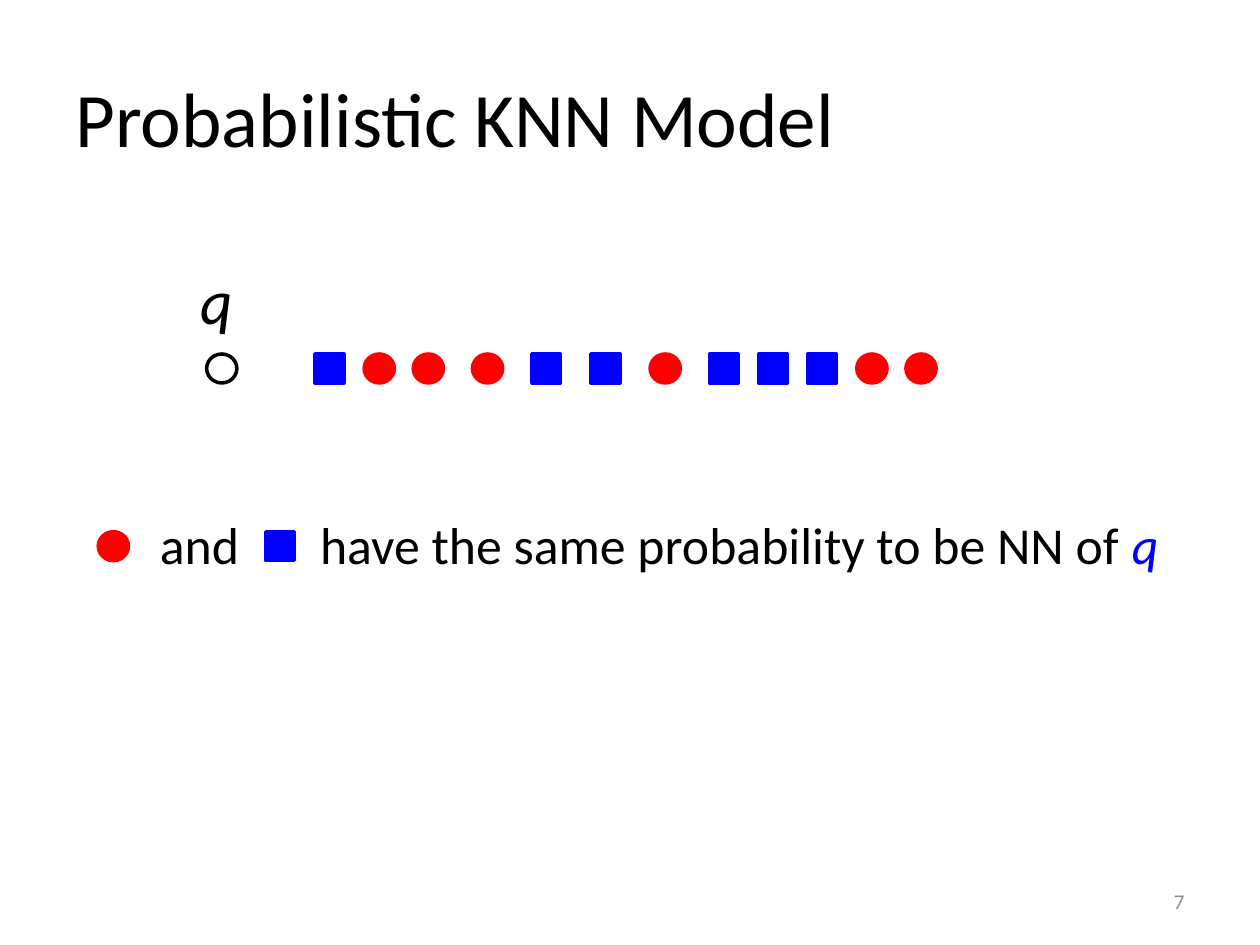
from lxml import etree
from pptx import Presentation
from pptx.dml.color import RGBColor
from pptx.enum import shapes, text
from pptx.oxml import ns
from pptx.util import Inches, Pt

BLACK = RGBColor(0x00, 0x00, 0x00)
WHITE = RGBColor(0xFF, 0xFF, 0xFF)
BLUE = RGBColor(0x00, 0x00, 0xFF)
RED = RGBColor(0xFF, 0x00, 0x00)
GRAY = RGBColor(0x8C, 0x8C, 0x8C)

FONT = "Calibri"
STATEMENT_SIZE = 29.6
MARK_HEIGHT = 0.23
# kind: (preset shape, width, fill, line)
MARKS = {
    "square": (shapes.MSO_SHAPE.RECTANGLE, 0.23, BLUE, BLUE),
    "circle": (shapes.MSO_SHAPE.OVAL, 0.24, RED, RED),
    "query": (shapes.MSO_SHAPE.OVAL, 0.24, WHITE, BLACK),
}
# Neighbours of q in order of distance: kind and left edge
NEIGHBOURS = [
    ("square", 2.5), ("circle", 2.89), ("circle", 3.28), ("circle", 3.75),
    ("square", 4.22), ("square", 4.69), ("circle", 5.16), ("square", 5.63),
    ("square", 6.02), ("square", 6.41), ("circle", 6.8), ("circle", 7.19),
]


def place(shape, left, top, width, height):
    shape.left, shape.top = Inches(left), Inches(top)
    shape.width, shape.height = Inches(width), Inches(height)


def add_text(paragraph, content, size, color=BLACK, italic=False, align=None):
    run = paragraph.add_run()
    run.text = content
    run.font.name = FONT
    run.font.size = Pt(size)
    run.font.italic = italic
    run.font.color.rgb = color
    if align is not None:
        paragraph.alignment = align


def add_mark(slide, kind, left, top):
    preset, width, fill, line = MARKS[kind]
    shape = slide.shapes.add_shape(
        preset, Inches(left), Inches(top), Inches(width), Inches(MARK_HEIGHT))
    shape.shadow.inherit = False
    shape.fill.solid()
    shape.fill.fore_color.rgb = fill
    shape.line.color.rgb = line
    shape.line.width = Pt(2)


def add_title(slide, left, top, width, height):
    title = slide.shapes.title
    place(title, left, top, width, height)
    title.text_frame.vertical_anchor = text.MSO_ANCHOR.MIDDLE
    add_text(title.text_frame.paragraphs[0], "Probabilistic KNN Model", 44,
             align=text.PP_ALIGN.LEFT)


def add_neighbour_row(slide, left, top):
    # Query point with its label above
    add_mark(slide, "query", left, top)
    label = slide.shapes.add_textbox(
        Inches(left - 0.15), Inches(top - 0.78), Inches(0.46), Inches(0.71))
    label.text_frame.word_wrap = False
    add_text(label.text_frame.paragraphs[0], "q", 36, italic=True)

    for kind, mark_left in NEIGHBOURS:
        add_mark(slide, kind, mark_left, top)


def add_statement(slide, left, top, width, height):
    # Word between the two marks
    joiner = slide.shapes.add_textbox(
        Inches(left + 0.56), Inches(top), Inches(0.9), Inches(height))
    joiner.text_frame.word_wrap = False

    # Sentence after the marks
    body = slide.placeholders[1]
    place(body, left, top, width, height)
    body.text_frame.auto_size = text.MSO_AUTO_SIZE.NONE
    body.text_frame.margin_left = Inches(1.93)

    joiner_line, body_line = (
        shape.text_frame.paragraphs[0] for shape in (joiner, body))
    for paragraph in (joiner_line, body_line):
        paragraph.space_before = Pt(6)
    properties = body_line._p.get_or_add_pPr()
    properties.set("marL", "0")
    properties.set("indent", "0")
    etree.SubElement(properties, ns.qn("a:buNone"))

    add_text(joiner_line, "and", STATEMENT_SIZE)
    add_text(body_line, "have the same probability to be NN of ",
             STATEMENT_SIZE)
    add_text(body_line, "q", STATEMENT_SIZE, color=BLUE, italic=True)

    # Marks that stand in for words
    add_mark(slide, "circle", left + 0.17, top + 0.2)
    add_mark(slide, "square", left + 1.5, top + 0.2)


def add_slide_number(slide, left, top, width, height):
    box = slide.shapes.add_textbox(
        Inches(left), Inches(top), Inches(width), Inches(height))
    box.text_frame.word_wrap = True
    box.text_frame.vertical_anchor = text.MSO_ANCHOR.MIDDLE
    add_text(box.text_frame.paragraphs[0], "7", 12, color=GRAY,
             align=text.PP_ALIGN.RIGHT)


def main():
    presentation = Presentation()
    presentation.slide_width = Inches(10)
    presentation.slide_height = Inches(7.5)
    slide = presentation.slides.add_slide(presentation.slide_layouts[1])

    add_title(slide, 0.5, 0.3, 9, 1.25)
    add_neighbour_row(slide, 1.64, 2.81)
    add_statement(slide, 0.61, 4.02, 9, 0.91)
    add_slide_number(slide, 7.17, 6.95, 2.33, 0.4)

    presentation.save("out.pptx")


if __name__ == "__main__":
    main()
